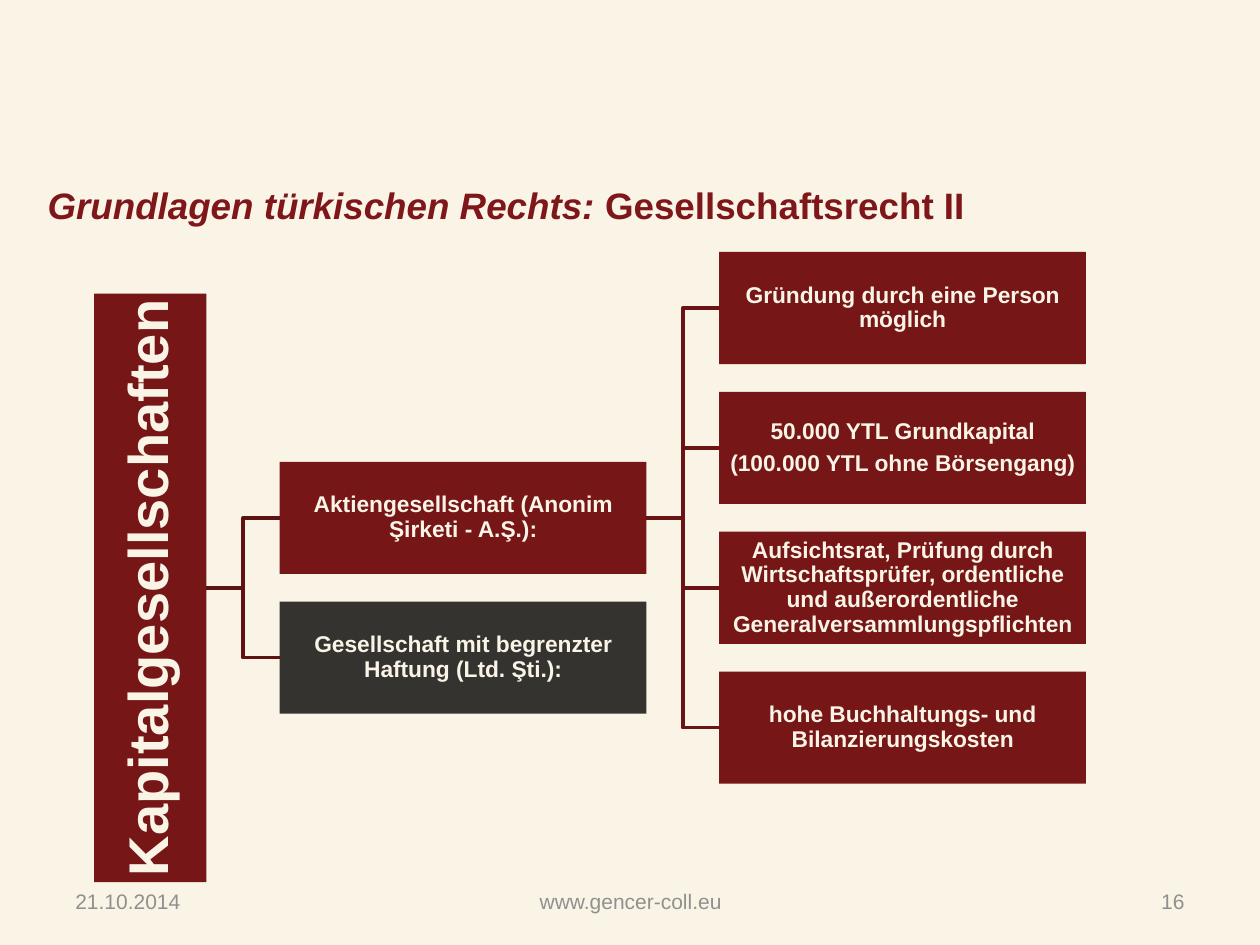
from lxml.etree import SubElement
from pptx import Presentation
from pptx.dml.color import RGBColor
from pptx.enum.shapes import MSO_CONNECTOR, MSO_SHAPE
from pptx.enum.text import MSO_ANCHOR, PP_ALIGN
from pptx.oxml.ns import qn
from pptx.util import Cm, Pt

CREAM, RED, DARK = "F9F4E6", "761617", "353330"
TITLE_RED, FOOTER_GREY = "7E161A", "90908F"
ROOT_LINE, BRANCH_LINE = "5E1212", "6B1415"

ROOT_X, ROOT_Y = 3.03, 11.85
ROOT_LENGTH = 11.86
BOX_WIDTH, BOX_HEIGHT = 7.39, 2.26
ROW_PITCH = 2.82
FORMS_LEFT, FEATURES_LEFT = 5.64, 14.5

FORMS = [
    ("Aktiengesellschaft (Anonim Şirketi - A.Ş.):", RED),
    ("Gesellschaft mit begrenzter Haftung (Ltd. Şti.):", DARK),
]
FEATURES = [
    ("Gründung durch eine Person möglich", RED),
    ("50.000 YTL Grundkapital\n(100.000 YTL ohne Börsengang)", RED),
    ("Aufsichtsrat, Prüfung durch Wirtschaftsprüfer, ordentliche und "
     "außerordentliche Generalversammlungspflichten", RED),
    ("hohe Buchhaltungs- und Bilanzierungskosten", RED),
]
FOOTER = [
    ("21.10.2014", 1.27, 5.92, PP_ALIGN.LEFT),
    ("www.gencer-coll.eu", 8.69, 8.05, PP_ALIGN.CENTER),
    ("16", 18.21, 5.92, PP_ALIGN.RIGHT),
]


def rgb(color):
    return RGBColor.from_string(color)


def set_font(paragraph, size, color, bold=False):
    font = paragraph.font
    font.name, font.size, font.bold = "Arial", Pt(size), bold
    font.color.rgb = rgb(color)


def add_label(slide, left, top, width, height):
    """Add an empty text box and return its first paragraph."""
    frame = slide.shapes.add_textbox(Cm(left), Cm(top), Cm(width), Cm(height)).text_frame
    frame.word_wrap = True
    frame.vertical_anchor = MSO_ANCHOR.MIDDLE
    return frame.paragraphs[0]


def add_title(slide):
    title = add_label(slide, 0.71, 3.53, 19.99, 1.19)
    set_font(title, 21, TITLE_RED, bold=True)
    topic = title.add_run()
    topic.text = "Grundlagen türkischen Rechts: "
    topic.font.italic = True
    title.add_run().text = "Gesellschaftsrecht II"


def add_footer(slide):
    for text, left, width, alignment in FOOTER:
        label = add_label(slide, left, 17.65, width, 1.02)
        label.text = text
        label.alignment = alignment
        set_font(label, 12, FOOTER_GREY)


def add_box(slide, left, top, width, text, color, size=13, inset=0.03):
    box = slide.shapes.add_shape(
        MSO_SHAPE.RECTANGLE, Cm(left), Cm(top), Cm(width), Cm(BOX_HEIGHT))
    box.shadow.inherit = False
    box.fill.solid()
    box.fill.fore_color.rgb = rgb(color)
    box.line.fill.background()
    frame = box.text_frame
    frame.word_wrap = True
    frame.vertical_anchor = MSO_ANCHOR.MIDDLE
    frame.margin_left = frame.margin_right = Cm(inset)
    frame.margin_top = frame.margin_bottom = Cm(inset)
    frame.text = text
    for paragraph in frame.paragraphs:
        paragraph.alignment = PP_ALIGN.CENTER
        paragraph.line_spacing = 0.9
        paragraph.space_after = Pt(round(0.35 * size, 1))
        set_font(paragraph, size, CREAM, bold=True)
    return box


def add_root(slide):
    root = add_box(slide, ROOT_X - ROOT_LENGTH / 2, ROOT_Y - BOX_HEIGHT / 2,
                   ROOT_LENGTH, "Kapitalgesellschaften", RED, size=32, inset=0.05)
    root.rotation = 270
    return root


def add_branches(slide, parent, parent_right, parent_y, left, entries, color):
    """Add boxes centred on the parent's height, each joined to the parent."""
    parent_side = 2 if parent.rotation else 3
    first_y = parent_y - ROW_PITCH * (len(entries) - 1) / 2
    boxes = []
    for row, (text, fill) in enumerate(entries):
        center_y = first_y + row * ROW_PITCH
        box = add_box(slide, left, center_y - BOX_HEIGHT / 2, BOX_WIDTH, text, fill)
        kind = MSO_CONNECTOR.ELBOW
        link = slide.shapes.add_connector(
            kind, Cm(parent_right), Cm(parent_y), Cm(left), Cm(center_y))
        link.begin_connect(parent, parent_side)
        link.end_connect(box, 1)
        # A rotated parent's side lies elsewhere than its unrotated frame says.
        link.begin_x, link.begin_y = Cm(parent_right), Cm(parent_y)
        link.line.color.rgb = rgb(color)
        link.line.width = Pt(2)
        SubElement(link.element.spPr, qn("a:effectLst"))
        boxes.append(box)
    return boxes


def main():
    presentation = Presentation()
    presentation.slide_width, presentation.slide_height = Cm(25.4), Cm(19.05)
    slide = presentation.slides.add_slide(presentation.slide_layouts[6])
    slide.background.fill.solid()
    slide.background.fill.fore_color.rgb = rgb(CREAM)

    add_footer(slide)
    add_title(slide)
    root = add_root(slide)
    forms = add_branches(slide, root, ROOT_X + BOX_HEIGHT / 2, ROOT_Y,
                         FORMS_LEFT, FORMS, ROOT_LINE)
    add_branches(slide, forms[0], FORMS_LEFT + BOX_WIDTH, ROOT_Y - ROW_PITCH / 2,
                 FEATURES_LEFT, FEATURES, BRANCH_LINE)
    presentation.save("out.pptx")


if __name__ == "__main__":
    main()
